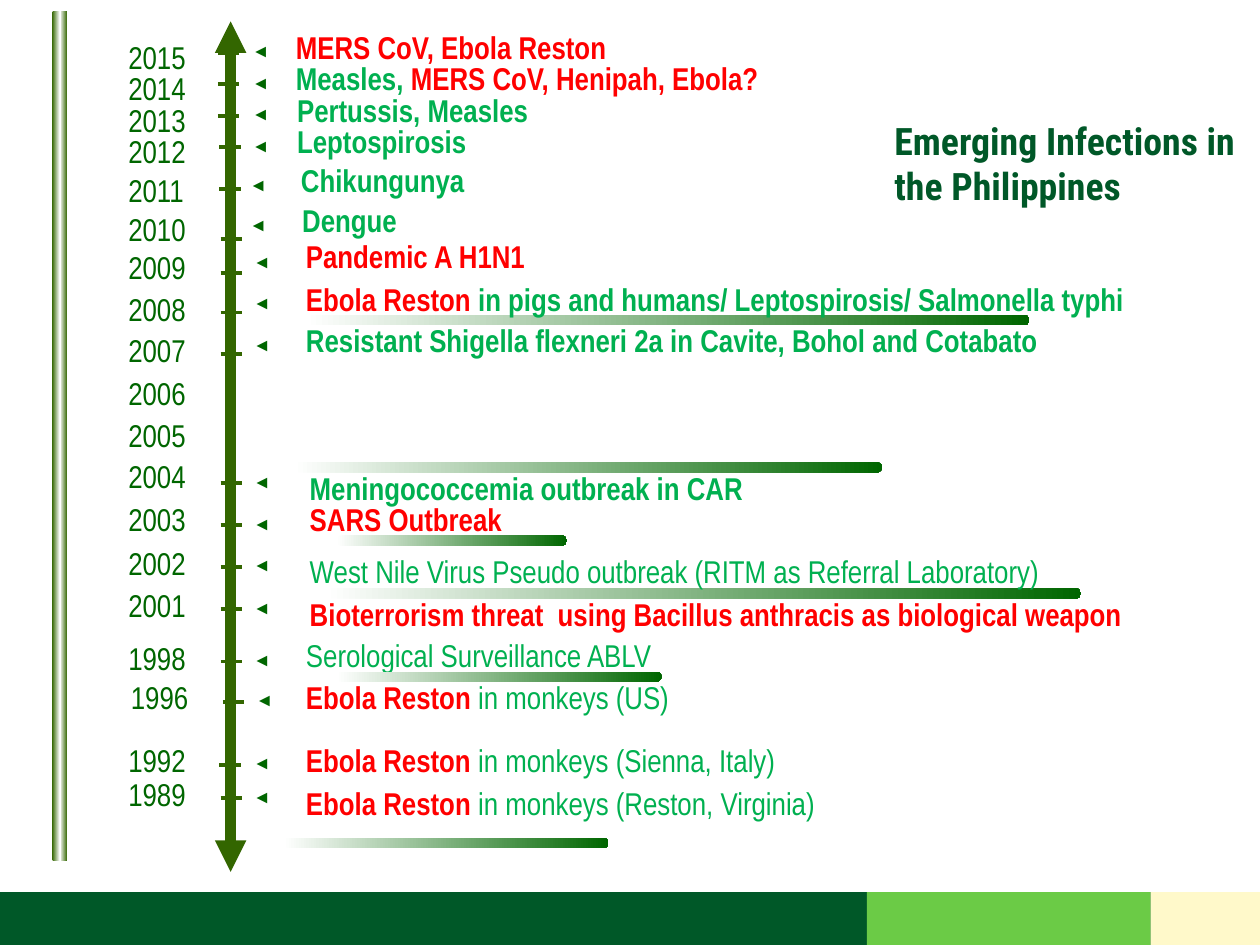
from lxml import etree
from pptx import Presentation, util as u
from pptx.dml.color import RGBColor
from pptx.enum import shapes, text
from pptx.oxml.ns import qn

W, H = 10, 7.5
HUE = dict(pine="005828", leaf="6BCB46", cream="FFF9CA", moss="336600",
           dark="006600", green="00B050", red="FF0000", white="FFFFFF")
BODY, HEAD, SIGN = "Arial Narrow", "Roboto Condensed", "Arial"
TITLE = "Emerging Infections in the Philippines"

# Event runs: (words, colour, bold)
EBOLA = ("Ebola Reston", "red", True)
# year, year top, tick (x, y), marker (x, y), event (x, y, width), runs
ROWS = [
    ("2006", 2.92, None, None, None, []),
    ("2005", 3.25, None, None, None, []),
    ("1998", 5.02, (1.75, 5.25), (2.03, 5.13), (2.33, 5, 2.98),
     [("Serological Surveillance ABLV", "green", False)]),
    ("2002", 4.27, (1.75, 4.5), (2.03, 4.38), (2.36, 4.33, 6.01),
     [("West Nile Virus Pseudo outbreak (RITM as Referral Laboratory)", "green", False)]),
    ("2003", 3.92, (1.75, 4.17), (2.03, 4.05), (2.36, 3.92, 1.74),
     [("SARS Outbreak", "red", True)]),
    ("2009", 1.92, (1.75, 2.17), (2.03, 1.97), (2.33, 1.83, 1.96),
     [("Pandemic A H1N1", "red", True)]),
    ("1989", 6.1, (1.75, 6.33), (2.03, 6.22), (2.33, 6.17, 4.29),
     [EBOLA, (" in monkeys (Reston, Virginia)", "green", False)]),
    ("2001", 4.6, (1.75, 4.83), (2.03, 4.72), (2.36, 4.67, 6.72),
     [("Bioterrorism threat  using Bacillus anthracis as biological weapon", "red", True)]),
    ("2004", 3.58, (1.75, 3.83), (2.03, 3.72), (2.36, 3.67, 3.68),
     [("Meningococcemia outbreak in CAR", "green", True)]),
    ("2008", 2.25, (1.75, 2.48), (2.03, 2.3), (2.33, 2.17, 6.77),
     [EBOLA, (" in pigs and humans/ Leptospirosis/ Salmonella typhi", "green", True)]),
    ("2007", 2.58, (1.75, 2.81), (2.03, 2.63), (2.33, 2.5, 6.08),
     [("Resistant Shigella flexneri 2a in Cavite, Bohol and Cotabato", "green", True)]),
    ("2010", 1.62, (1.75, 1.9), (2, 1.68), (2.3, 1.55, 0.96),
     [("Dengue", "green", True)]),
    ("2011", 1.31, (1.74, 1.5), (2, 1.36), (2.29, 1.23, 1.57),
     [("Chikungunya", "green", True)]),
    ("2012", 1, (1.74, 1.17), (2.02, 1.05), (2.26, 0.92, 1.56),
     [("Leptospirosis", "green", True)]),
    ("2013", 0.75, (1.73, 0.92), (2.02, 0.8), (2.26, 0.67, 2.06),
     [("Pertussis, Measles", "green", True)]),
    ("2014", 0.5, (1.73, 0.67), (2.02, 0.55), (2.25, 0.42, 4.72),
     [("Measles, ", "green", True), ("MERS CoV, Henipah, Ebola?", "red", True)]),
    ("1992", 5.83, (1.74, 6.07), (2.03, 5.95), (2.33, 5.83, 3.97),
     [EBOLA, (" in monkeys (Sienna, Italy)", "green", False)]),
    ("1996", 5.33, (1.77, 5.57), (2.05, 5.45), (2.33, 5.33, 3.11),
     [EBOLA, (" in monkeys (US)", "green", False)]),
    ("2015", 0.25, (1.73, 0.42), (2.02, 0.3), (2.25, 0.17, 4.72),
     [("MERS CoV, Ebola Reston", "red", True)]),
]
UNDER = 3  # leading rows that lie beneath the fading bars
BARS = [(2.58, 4.67, 6), (2.25, 6.65, 2.58), (2.67, 5.33, 2.58),
        (2.67, 4.25, 1.83), (2.33, 3.67, 4.67), (2.42, 2.5, 5.75)]
BANDS = [(0, 1, "pine"), (0.913, 0.087, "cream"), (0.688, 0.225, "leaf")]

deck = Presentation()
deck.slide_width, deck.slide_height = u.Inches(W), u.Inches(H)
slide = deck.slides.add_slide(deck.slide_layouts[6])


def rgb(name):
    return RGBColor.from_string(HUE[name])


def block(kind, *box):
    shape = slide.shapes.add_shape(kind, *map(u.Inches, box))
    shape.shadow.inherit = False
    shape.line.fill.background()
    return shape


def fade(shape, names, angle):
    """Spread the named colours evenly along a linear gradient."""
    shape.fill.gradient()
    shape.fill.gradient_angle = angle
    stops = shape._element.spPr.find(qn("a:gradFill")).find(qn("a:gsLst"))
    for old in list(stops):
        stops.remove(old)
    for i, name in enumerate(names):
        stop = etree.SubElement(stops, qn("a:gs"), pos=str(100000 * i // (len(names) - 1)))
        etree.SubElement(stop, qn("a:srgbClr"), val=HUE[name])


def label(box, runs, size=18, face=BODY, wrap=False, grow=True):
    area = slide.shapes.add_textbox(*map(u.Inches, box))
    frame = area.text_frame
    frame.word_wrap = wrap
    frame.auto_size = text.MSO_AUTO_SIZE.SHAPE_TO_FIT_TEXT if grow else text.MSO_AUTO_SIZE.NONE
    for words, hue, bold in runs:
        run = frame.paragraphs[0].add_run()
        run.text = words
        font = run.font
        font.name, font.size, font.bold = face, u.Pt(size), bold
        font.color.rgb = rgb(hue)
    return area


def stroke(x, y, x2, y2, width):
    line = slide.shapes.add_connector(shapes.MSO_CONNECTOR.STRAIGHT,
                                      *map(u.Inches, (x, y, x2, y2)))
    line.line.color.rgb, line.line.width = rgb("moss"), u.Pt(width)
    etree.SubElement(line._element.spPr, qn("a:effectLst"))
    return line


def entry(year, top, tick, mark, spot, runs):
    label((0.94 if year == "1996" else 0.92, top, 0.66, 0.4), [(year, "dark", False)])
    if not runs:
        return
    stroke(*tick, tick[0] + 0.17, tick[1], 2.25)
    sign = label((*mark, 0.42, 0.32), [("▼", "dark", False)], face=SIGN, wrap=True)
    sign.rotation = 90
    sign.text_frame.paragraphs[0].runs[0].font._element.set("baseline", "-25000")
    x, y, width = spot
    label((x, y, width, 0.4), runs, wrap=width == 4.72)


# Footer bands
for left, share, hue in BANDS:
    band = block(shapes.MSO_SHAPE.RECTANGLE, left * W, 7.08, share * W, 0.42)
    band.fill.solid()
    band.fill.fore_color.rgb = rgb(hue)

# Title
head = label((7, 1.18, 3.03, 0.22), [(TITLE, "pine", True)], 21.6, HEAD, True, False)
head.text_frame.vertical_anchor = text.MSO_ANCHOR.MIDDLE

# Upright rail at the left
rail = block(shapes.MSO_SHAPE.ROUNDED_RECTANGLE, -2.9, 3.4, 6.75, 0.12)
rail.rotation = 270
fade(rail, ("moss", "white", "moss"), 90)

# Time axis with a head at each end
axis = stroke(1.83, 0.17, 1.83, 6.92, 6)
ends = axis.line._get_or_add_ln()
for tag in ("a:headEnd", "a:tailEnd"):
    etree.SubElement(ends, qn(tag), type="triangle")

# Years and events, with fading bars between the layers
for row in ROWS[:UNDER]:
    entry(*row)
for left, top, width in BARS:
    bar = block(shapes.MSO_SHAPE.ROUNDED_RECTANGLE, left, top, width, 0.08)
    bar.adjustments[0] = 0.5
    fade(bar, ("white", "dark"), 0)
for row in ROWS[UNDER:]:
    entry(*row)

deck.save("out.pptx")
